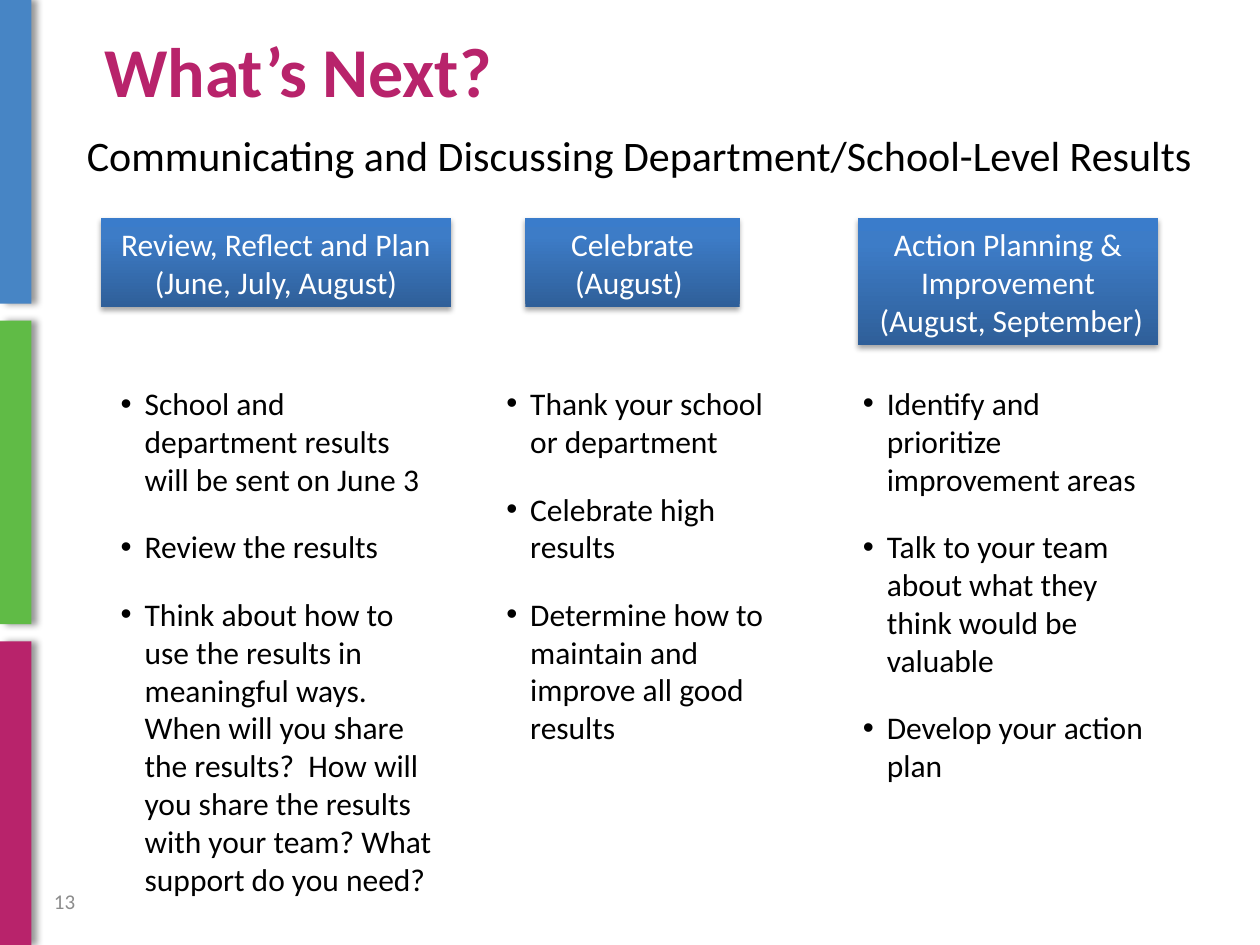
"""Build the "What's Next?" slide with three columns of follow-up steps."""
from lxml.etree import SubElement
from pptx import Presentation
from pptx.dml.color import RGBColor
from pptx.enum.shapes import MSO_SHAPE as Shape
from pptx.enum.text import MSO_ANCHOR as Anchor, MSO_AUTO_SIZE as AutoSize, PP_ALIGN as Align
from pptx.oxml import parse_xml
from pptx.oxml.ns import nsdecls, qn
from pptx.util import Inches, Pt

BAR_COLOURS = ["4785C5", "60BB46", "B8236B"]
BAR_HEIGHT, BAR_STEP = 2.41, 2.545
HEADING_STOPS = [(0, "2F5F99"), (80, "3D7CC7"), (100, "3A7CCB")]
HEADING_TOP, BULLETS_TOP = 1.73, 3

COLUMNS = [
    {
        "heading": ["Review, Reflect and Plan", "(June, July, August)"],
        "heading_box": (0.8, HEADING_TOP, 2.78, 0.71),
        "wrap": False,
        "bullets": [
            "School and department results will be sent on June 3",
            "Review the results",
            "Think about how to use the results in meaningful ways. When will you share "
            "the results?  How will you share the results with your team? "
            "What support do you need?",
        ],
        "bullets_box": (0.86, BULLETS_TOP, 2.67, 4.95),
    },
    {
        "heading": ["Celebrate", "(August) "],
        "heading_box": (4.17, HEADING_TOP, 1.7, 0.71),
        "wrap": True,
        "bullets": [
            "Thank your school or department",
            "Celebrate high results",
            "Determine how to maintain and improve all good results",
        ],
        "bullets_box": (3.92, BULLETS_TOP, 2.5, 3),
    },
    {
        "heading": ["Action Planning &", "Improvement", " (August, September)"],
        "heading_box": (6.81, HEADING_TOP, 2.38, 1.01),
        "wrap": False,
        "bullets": [
            "Identify and prioritize improvement areas",
            "Talk to your team about what they think would be valuable",
            "Develop your action plan",
        ],
        "bullets_box": (6.75, BULLETS_TOP, 2.5, 3.3),
    },
]


def colour(value):
    return RGBColor.from_string(value)


def inches(box):
    return [Inches(length) for length in box]


class SlideBuilder:
    font_name = "Calibri"
    body_size = 18
    bullet_indent = 0.19
    bullet_gap = 17

    def __init__(self, slide):
        self.slide = slide

    def style(self, paragraph, size, hex_colour, bold=False):
        font = paragraph.font
        font.name, font.size, font.bold = self.font_name, Pt(size), bold
        font.color.rgb = colour(hex_colour)

    def rectangle(self, box):
        shape = self.slide.shapes.add_shape(Shape.RECTANGLE, *inches(box))
        shape.line.fill.background()
        return shape

    def shadow(self, shape, opacity, blur, distance, angle):
        shape.shadow.inherit = False
        effects = shape._element.spPr.find(qn("a:effectLst"))
        outer = SubElement(
            effects, qn("a:outerShdw"), blurRad=str(Pt(blur)), dist=str(Pt(distance)),
            dir=str(angle * 60000), algn="ctr", rotWithShape="0")
        shade = SubElement(outer, qn("a:srgbClr"), val="000000")
        SubElement(shade, qn("a:alpha"), val=str(opacity * 1000))

    def gradient(self, shape, stops, angle):
        properties = shape._element.spPr
        stop_xml = "".join(
            f'<a:gs pos="{position * 1000}"><a:srgbClr val="{value}"/></a:gs>'
            for position, value in stops)
        fill = parse_xml(
            f'<a:gradFill {nsdecls("a")} rotWithShape="1"><a:gsLst>{stop_xml}</a:gsLst>'
            f'<a:lin ang="{angle * 60000}" scaled="0"/></a:gradFill>')
        properties.find(qn("a:prstGeom")).addnext(fill)

    def bar(self, box, hex_colour):
        shape = self.rectangle(box)
        shape.fill.solid()
        shape.fill.fore_color.rgb = colour(hex_colour)
        self.shadow(shape, 40, 4, 3, 0)

    def heading(self, box, lines, wrap):
        shape = self.rectangle(box)
        self.gradient(shape, HEADING_STOPS, 270)
        self.shadow(shape, 35, 3.1, 1.8, 90)
        text_frame = shape.text_frame
        text_frame.text = "\n".join(lines)
        text_frame.word_wrap = wrap
        text_frame.auto_size = AutoSize.SHAPE_TO_FIT_TEXT
        text_frame.vertical_anchor = Anchor.MIDDLE
        for paragraph in text_frame.paragraphs:
            paragraph.alignment = Align.CENTER
            self.style(paragraph, self.body_size, "FFFFFF")

    def text(self, box, content, size, hex_colour="000000", bold=False, anchor=Anchor.TOP):
        text_frame = self.slide.shapes.add_textbox(*inches(box)).text_frame
        text_frame.word_wrap = True
        text_frame.vertical_anchor = anchor
        text_frame.text = content
        for paragraph in text_frame.paragraphs:
            self.style(paragraph, size, hex_colour, bold)
        return text_frame

    def bullets(self, box, items):
        text_frame = self.slide.shapes.add_textbox(*inches(box)).text_frame
        text_frame.word_wrap = True
        text_frame.text = "\n".join(items)
        indent = Inches(self.bullet_indent)
        for index, paragraph in enumerate(text_frame.paragraphs):
            properties = paragraph._p.get_or_add_pPr()
            properties.set("marL", str(indent))
            properties.set("indent", str(-indent))
            SubElement(properties, qn("a:buFont"), typeface="Arial")
            SubElement(properties, qn("a:buChar"), char="•")
            if index:
                paragraph.space_before = Pt(self.bullet_gap)
            self.style(paragraph, self.body_size, "000000")


def main():
    presentation = Presentation()
    presentation.slide_width, presentation.slide_height = Inches(10), Inches(7.5)
    builder = SlideBuilder(presentation.slides.add_slide(presentation.slide_layouts[6]))

    for index, bar_colour in enumerate(BAR_COLOURS):
        builder.bar((0, index * BAR_STEP, 0.25, BAR_HEIGHT), bar_colour)

    builder.text((0.73, 0.17, 9, 1.17), "What’s Next?", 40, "B8236B", bold=True)
    builder.text((0.59, 0.98, 9.22, 0.5),
                 "Communicating and Discussing Department/School-Level Results", 24)

    for column in COLUMNS:
        builder.heading(column["heading_box"], column["heading"], column["wrap"])
        builder.bullets(column["bullets_box"], column["bullets"])

    builder.text((0.33, 6.95, 2.33, 0.4), "13", 12, "8C8C8C", anchor=Anchor.MIDDLE)
    presentation.save("out.pptx")


if __name__ == "__main__":
    main()
